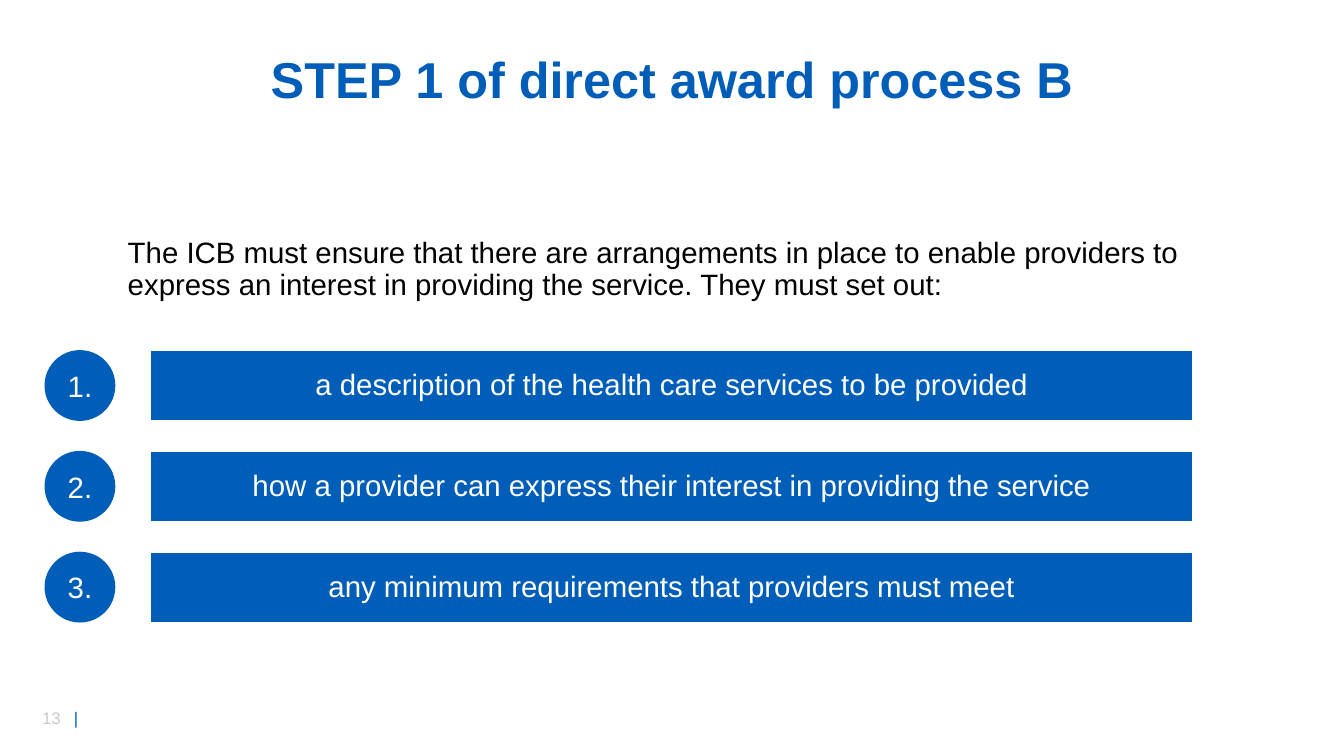
from pptx import Presentation
from pptx.dml.color import RGBColor
from pptx.enum import shapes, text
from pptx.oxml import parse_xml
from pptx.oxml.ns import nsdecls
from pptx.util import Cm, Pt

COLORS = {"blue": "005EB8", "white": "FFFFFF", "black": "000000", "grey": "C9C9C9"}
STEPS = [
    "a description of the health care services to be provided",
    "how a provider can express their interest in providing the service",
    "any minimum requirements that providers must meet",
]
TOP, PITCH = 8.84, 2.54


def color(name):
    return RGBColor.from_string(COLORS[name])


def style(font, size, name, bold=False):
    font.name = "Arial"
    font.size = Pt(size)
    font.bold = bold
    font.color.rgb = color(name)


def add_text(slide, box, words, size, name, bold=False):
    frame = slide.shapes.add_textbox(*map(Cm, box)).text_frame
    frame.word_wrap = True
    para = frame.paragraphs[0]
    para.text = words
    para.line_spacing = 0.9
    style(para.font, size, name, bold)
    return frame


def add_block(group, kind, box, words, line):
    shape = group.shapes.add_shape(kind, *map(Cm, box))
    shape.shadow.inherit = False
    shape.fill.solid()
    shape.fill.fore_color.rgb = color("blue")
    shape.line.color.rgb = color(line)
    shape.line.width = Pt(1)
    frame = shape.text_frame
    frame.vertical_anchor = text.MSO_ANCHOR.MIDDLE
    para = frame.paragraphs[0]
    para.text = words
    para.alignment = text.PP_ALIGN.CENTER
    style(para.font, 21, "white")
    return frame


def add_step(slide, index, words):
    top = TOP + index * PITCH
    group = slide.shapes.add_group_shape()
    bar = add_block(group, shapes.MSO_SHAPE.RECTANGLE,
                    (3.78, top, 26.29, 1.77), words, "white")
    bar.margin_left = bar.margin_right = Cm(0.15)
    bar.margin_top = bar.margin_bottom = Cm(0.15)
    bar.paragraphs[0].line_spacing = 0.9
    disc = add_block(group, shapes.MSO_SHAPE.OVAL,
                     (1.14, top, 1.75, 1.75), f"{index + 1}.", "blue")
    disc.word_wrap = False


def add_footer(slide, number):
    frame = slide.shapes.add_textbox(Cm(0.81), Cm(17.7), Cm(1.8), Cm(0.76)).text_frame
    para = frame.paragraphs[0]
    for words, name in ((f"{number}\t", "grey"), ("|", "blue")):
        run = para.add_run()
        run.text = words
        style(run.font, 12, name)
    para.line_spacing = 1.0
    props = para._p.get_or_add_pPr()
    props.append(parse_xml(
        f'<a:tabLst {nsdecls("a")}><a:tab pos="{Cm(0.8)}" algn="l"/></a:tabLst>'))


def main():
    deck = Presentation()
    deck.slide_width, deck.slide_height = Cm(33.87), Cm(19.05)
    slide = deck.slides.add_slide(deck.slide_layouts[6])
    add_footer(slide, 13)
    title = add_text(slide, (5.18, 1.22, 23.52, 1.7),
                     "STEP 1 of direct award process B", 36, "blue", True)
    title.vertical_anchor = text.MSO_ANCHOR.MIDDLE
    title.paragraphs[0].alignment = text.PP_ALIGN.CENTER
    add_text(slide, (2.97, 5.87, 27.91, 1.98),
             "The ICB must ensure that there are arrangements in place to enable "
             "providers to express an interest in providing the service. "
             "They must set out:", 21, "black")
    for index, words in enumerate(STEPS):
        add_step(slide, index, words)
    deck.save("out.pptx")


if __name__ == "__main__":
    main()
